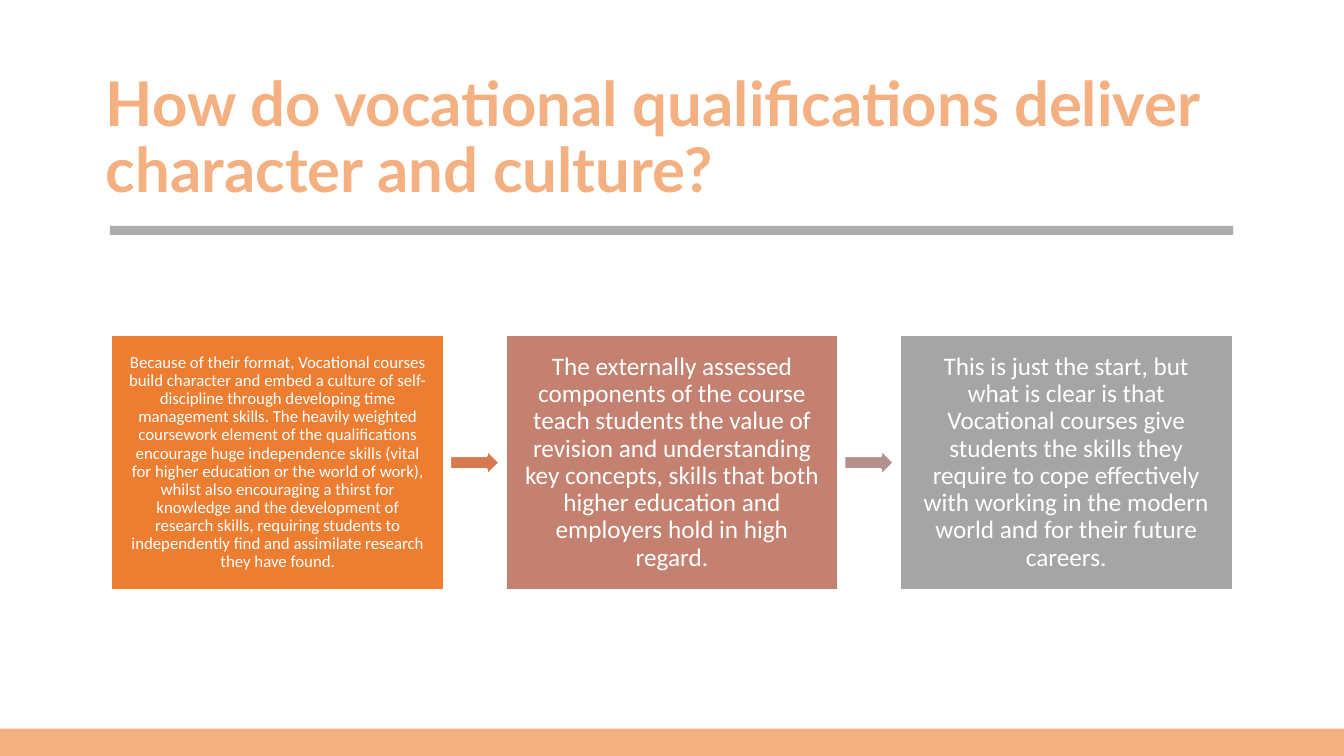
"""Build the slide on how vocational qualifications deliver character and culture."""
from lxml import etree
from pptx import Presentation
from pptx.dml.color import RGBColor
from pptx.enum import shapes, text
from pptx.oxml import ns
from pptx.util import Inches, Pt

PEACH = RGBColor(0xF4, 0xB0, 0x81)
GREY = RGBColor(0x80, 0x80, 0x80)
WHITE = RGBColor(0xFF, 0xFF, 0xFF)
ORANGE = RGBColor(0xED, 0x7D, 0x31)
ROSE = RGBColor(0xC4, 0x81, 0x70)
SILVER = RGBColor(0xA5, 0xA5, 0xA5)
BURNT_ORANGE = RGBColor(0xD8, 0x7A, 0x51)
DUSTY_ROSE = RGBColor(0xB4, 0x90, 0x8B)

TITLE = "How do vocational qualifications deliver character and culture?"
STEPS = [
    ("Because of their format, Vocational courses build character and embed a culture of "
     "self-discipline through developing time management skills. The heavily weighted "
     "coursework element of the qualifications encourage huge independence skills (vital "
     "for higher education or the world of work), whilst also encouraging a thirst for "
     "knowledge and the development of research skills, requiring students to "
     "independently find and assimilate research they have found.", 12, ORANGE),
    ("The externally assessed components of the course teach students the value of "
     "revision and understanding key concepts, skills that both higher education and "
     "employers hold in high regard.", 18, ROSE),
    ("This is just the start, but what is clear is that Vocational courses give students "
     "the skills they require to cope effectively with working in the modern world and "
     "for their future careers.", 18, SILVER),
]
ARROW_COLORS = [BURNT_ORANGE, DUSTY_ROSE]

SLIDE_WIDTH, SLIDE_HEIGHT = 13.33, 7.5
FOOTER_HEIGHT = 0.27
STEP_LEFT, STEP_TOP, STEP_WIDTH, STEP_HEIGHT = 1.1, 3.32, 3.31, 2.54
STEP_PITCH = 3.91
ARROW_WIDTH, ARROW_HEIGHT = 0.5, 0.27
MARGIN = 0.17


def add_block(slide, kind, left, top, width, height, color, outlined=False):
    """Add a filled shape, with a white outline if asked."""
    shape = slide.shapes.add_shape(
        kind, Inches(left), Inches(top), Inches(width), Inches(height))
    shape.shadow.inherit = False
    shape.fill.solid()
    shape.fill.fore_color.rgb = color
    if outlined:
        shape.line.color.rgb = WHITE
        shape.line.width = Pt(2)
    else:
        shape.line.fill.background()
    return shape


def write(frame, content, font_name, size, color, bold=False):
    """Write one run into the first paragraph of a middle-anchored frame."""
    frame.word_wrap = True
    frame.auto_size = text.MSO_AUTO_SIZE.NONE
    frame.vertical_anchor = text.MSO_ANCHOR.MIDDLE
    paragraph = frame.paragraphs[0]
    paragraph.line_spacing = 0.9
    run = paragraph.add_run()
    run.text = content
    run.font.name = font_name
    run.font.size = Pt(size)
    run.font.bold = bold
    run.font.color.rgb = color
    return paragraph


def add_step(slide, left, content, size, color):
    """Add one step box with centred text."""
    box = add_block(slide, shapes.MSO_SHAPE.RECTANGLE, left, STEP_TOP,
                    STEP_WIDTH, STEP_HEIGHT, color, outlined=True)
    frame = box.text_frame
    frame.margin_left = frame.margin_right = Inches(MARGIN)
    frame.margin_top = frame.margin_bottom = Inches(MARGIN)
    paragraph = write(frame, content, "Calibri", size, WHITE)
    paragraph.alignment = text.PP_ALIGN.CENTER


def main():
    """Create and save the presentation."""
    presentation = Presentation()
    presentation.slide_width = Inches(SLIDE_WIDTH)
    presentation.slide_height = Inches(SLIDE_HEIGHT)
    slide = presentation.slides.add_slide(presentation.slide_layouts[5])

    add_block(slide, shapes.MSO_SHAPE.RECTANGLE, 0, SLIDE_HEIGHT - FOOTER_HEIGHT,
              SLIDE_WIDTH, FOOTER_HEIGHT, PEACH)

    title = slide.shapes.title
    title.left, title.top = Inches(0.95), Inches(0.66)
    title.width, title.height = Inches(11.43), Inches(1.45)
    paragraph = write(title.text_frame, TITLE, "Lato", 44, PEACH, bold=True)
    paragraph.alignment = text.PP_ALIGN.LEFT

    rule = add_block(slide, shapes.MSO_SHAPE.RECTANGLE, 1.09, 2.24, 11.14, 0.09, GREY)
    rule_color = rule.fill._xPr.find(ns.qn("a:solidFill"))[0]
    etree.SubElement(rule_color, ns.qn("a:alpha"), val="65000")

    for index, (content, size, color) in enumerate(STEPS):
        add_step(slide, STEP_LEFT + index * STEP_PITCH, content, size, color)

    gap = STEP_PITCH - STEP_WIDTH
    arrow_top = STEP_TOP + (STEP_HEIGHT - ARROW_HEIGHT) / 2
    for index, color in enumerate(ARROW_COLORS):
        arrow_left = STEP_LEFT + index * STEP_PITCH + STEP_WIDTH + (gap - ARROW_WIDTH) / 2
        add_block(slide, shapes.MSO_SHAPE.RIGHT_ARROW, arrow_left, arrow_top,
                  ARROW_WIDTH, ARROW_HEIGHT, color, outlined=True)

    presentation.save("out.pptx")


if __name__ == "__main__":
    main()
